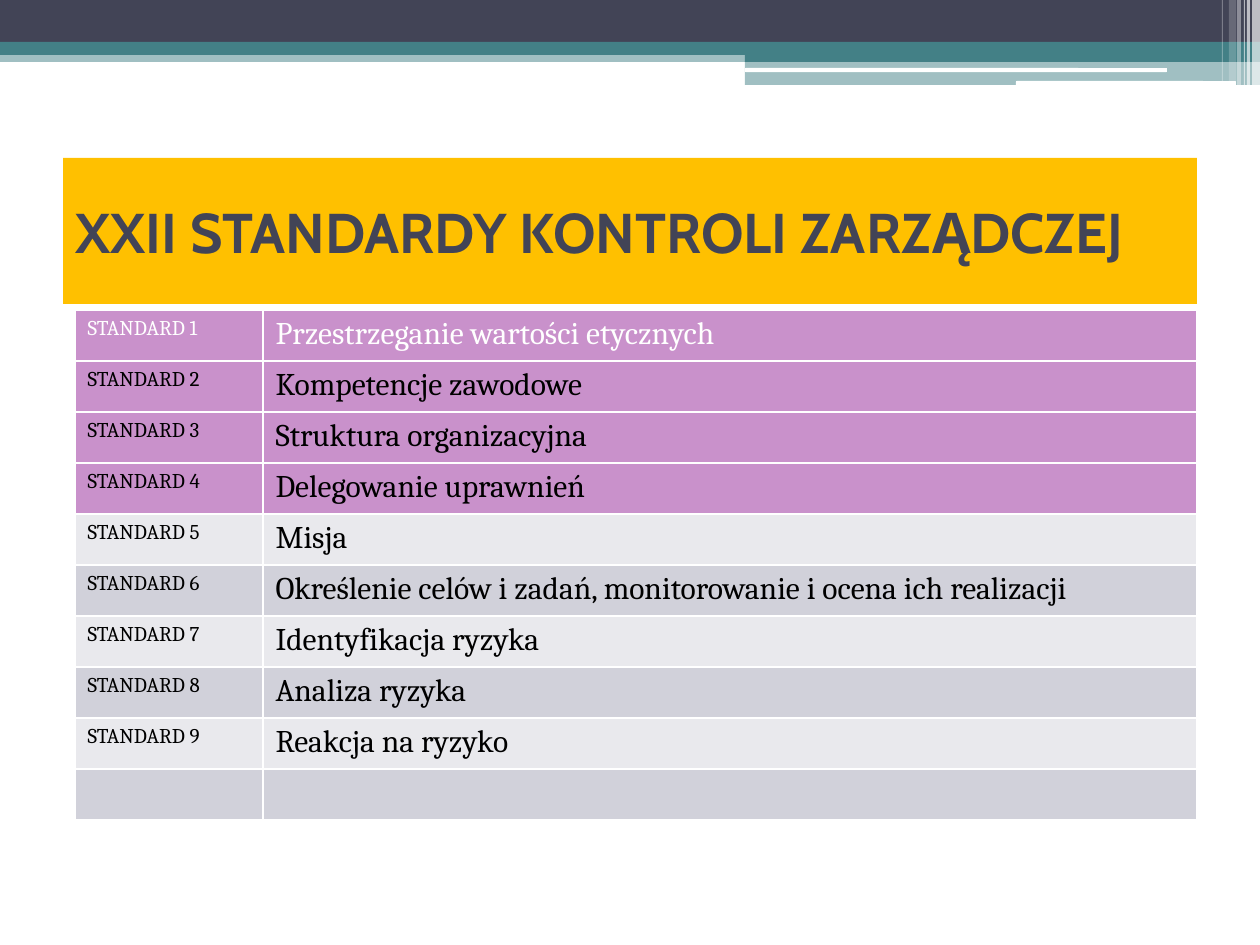
"""Build the slide listing the management control standards."""
from lxml import etree
from pptx import Presentation
from pptx.dml.color import RGBColor
from pptx.enum.shapes import MSO_SHAPE
from pptx.enum.text import MSO_ANCHOR, PP_ALIGN
from pptx.oxml.ns import qn
from pptx.util import Emu, Pt

RECT, ROUND = MSO_SHAPE.RECTANGLE, MSO_SHAPE.ROUNDED_RECTANGLE
MIDDLE, LEFT = MSO_ANCHOR.MIDDLE, PP_ALIGN.LEFT
SCALE = 914400 / 126
COLORS = {
    "navy": "424456", "teal": "438086", "white": "FFFFFF", "black": "000000",
    "gold": "FFC000", "violet": "C991CB", "light": "E9E9ED", "grey": "D1D1DA",
}
BARS = [
    (RECT, 0, 50, 1260, 12, "teal", 50),
    (RECT, 0, 0, 1260, 42, "navy", 100),
    (RECT, 0, 42, 1260, 13, "teal", 100),
    (RECT, 745, 49, 515, 13, "teal", 100),
    (RECT, 745, 61, 515, 24, "teal", 50),
    (ROUND, 745, 68, 422, 4, "white", 100),
    (ROUND, 1016, 81, 220, 5, "white", 100),
    (RECT, 1252, 0, 8, 86, "white", 65),
    (RECT, 1247, 0, 3, 86, "white", 65),
    (RECT, 1244, 0, 1, 86, "white", 60),
    (RECT, 1237, 0, 4, 86, "white", 40),
    (RECT, 1229, 0, 7, 81, "white", 20),
    (RECT, 1222, 0, 1, 81, "white", 30),
]
STANDARDS = [
    "Przestrzeganie wartości etycznych",
    "Kompetencje zawodowe",
    "Struktura organizacyjna",
    "Delegowanie uprawnień",
    "Misja",
    "Określenie celów i zadań, monitorowanie i ocena ich realizacji",
    "Identyfikacja ryzyka",
    "Analiza ryzyka",
    "Reakcja na ryzyko",
]


def px(n):
    return Emu(round(n * SCALE))


def paint(fill, color, alpha=100):
    fill.solid()
    fill.fore_color.rgb = RGBColor.from_string(COLORS[color])
    if alpha < 100:
        clr = fill._xPr.find(qn("a:solidFill"))[0]
        etree.SubElement(clr, qn("a:alpha"), val=str(alpha * 1000))


prs = Presentation()
prs.slide_width, prs.slide_height = px(1260), px(945)
s = prs.slides.add_slide(prs.slide_layouts[5])
title = s.shapes.title

for kind, x, y, w, h, color, alpha in BARS:
    sp = s.shapes.add_shape(kind, px(x), px(y), px(w), px(h))
    sp.shadow.inherit = False
    sp.line.fill.background()
    paint(sp.fill, color, alpha)

title.left, title.top, title.width, title.height = px(63), px(158), px(1134), px(146)
paint(title.fill, "gold")
tf = title.text_frame
tf.text = "XXII STANDARDY KONTROLI ZARZĄDCZEJ"
tf.vertical_anchor = MIDDLE
p = tf.paragraphs[0]
p.alignment = LEFT
p.font.name, p.font.size, p.font.bold = "Cabin", Pt(32), True
p.font.color.rgb = RGBColor.from_string(COLORS["navy"])

rows = [(f"STANDARD {n}", name) for n, name in enumerate(STANDARDS, 1)] + [("", "")]
table = s.shapes.add_table(len(rows), 2, px(75), px(310), px(1122), px(51 * len(rows))).table
table.columns[0].width, table.columns[1].width = px(188), px(934)
for i, row in enumerate(rows):
    table.rows[i].height = px(51)
    for j, text in enumerate(row):
        cell = table.cell(i, j)
        for side in ("lnL", "lnR", "lnT", "lnB"):
            ln = etree.SubElement(cell._tc.get_or_add_tcPr(), qn(f"a:{side}"), w=str(Pt(1)))
            solid = etree.SubElement(ln, qn("a:solidFill"))
            etree.SubElement(solid, qn("a:srgbClr"), val=COLORS["white"])
        paint(cell.fill, "violet" if i < 4 else ("light", "grey")[i % 2])
        cell.text = text
        p = cell.text_frame.paragraphs[0]
        p.font.name, p.font.size, p.font.bold = "Cambria", Pt((12, 18)[j]), False
        p.font.color.rgb = RGBColor.from_string(COLORS["black" if i else "white"])

prs.save("out.pptx")
